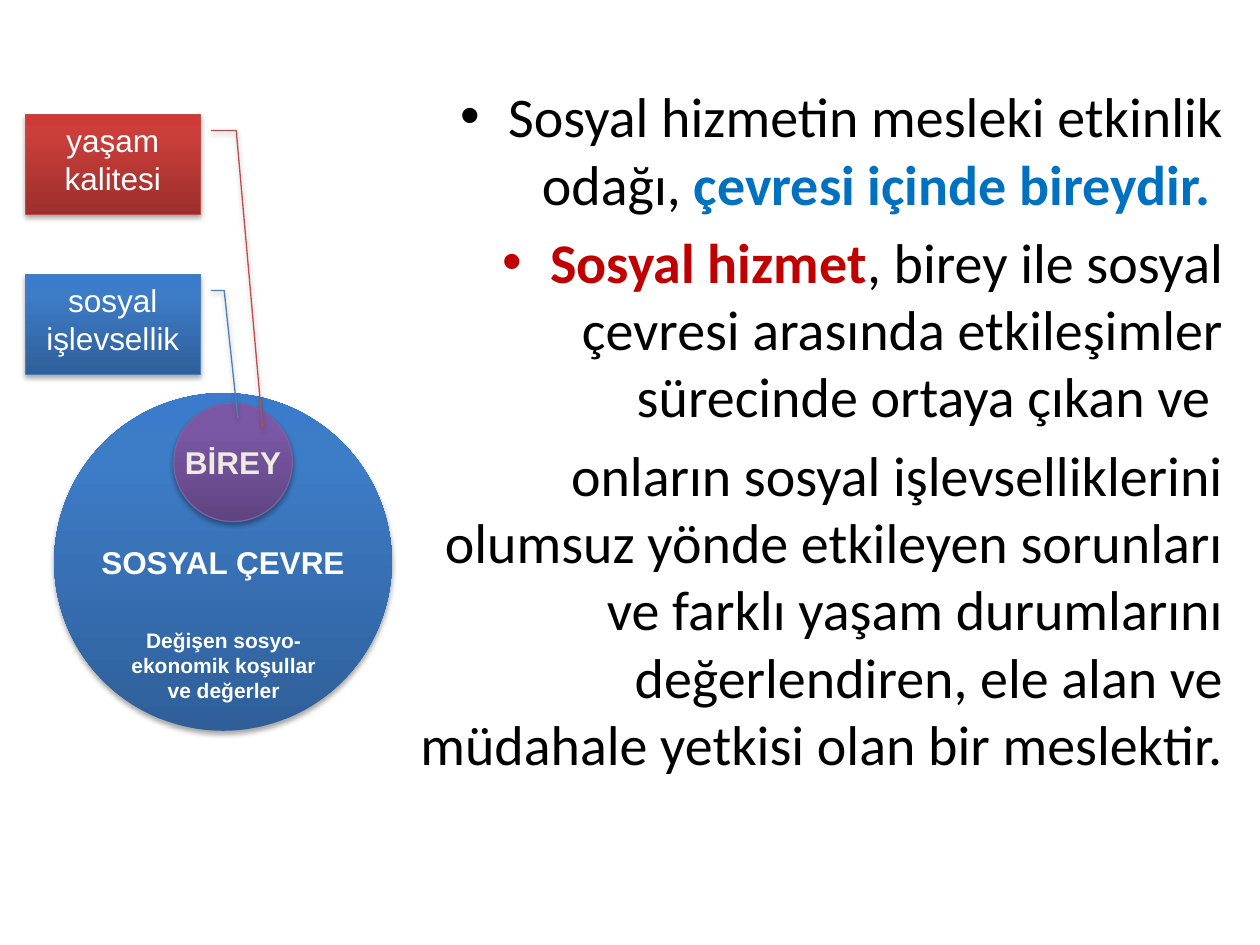
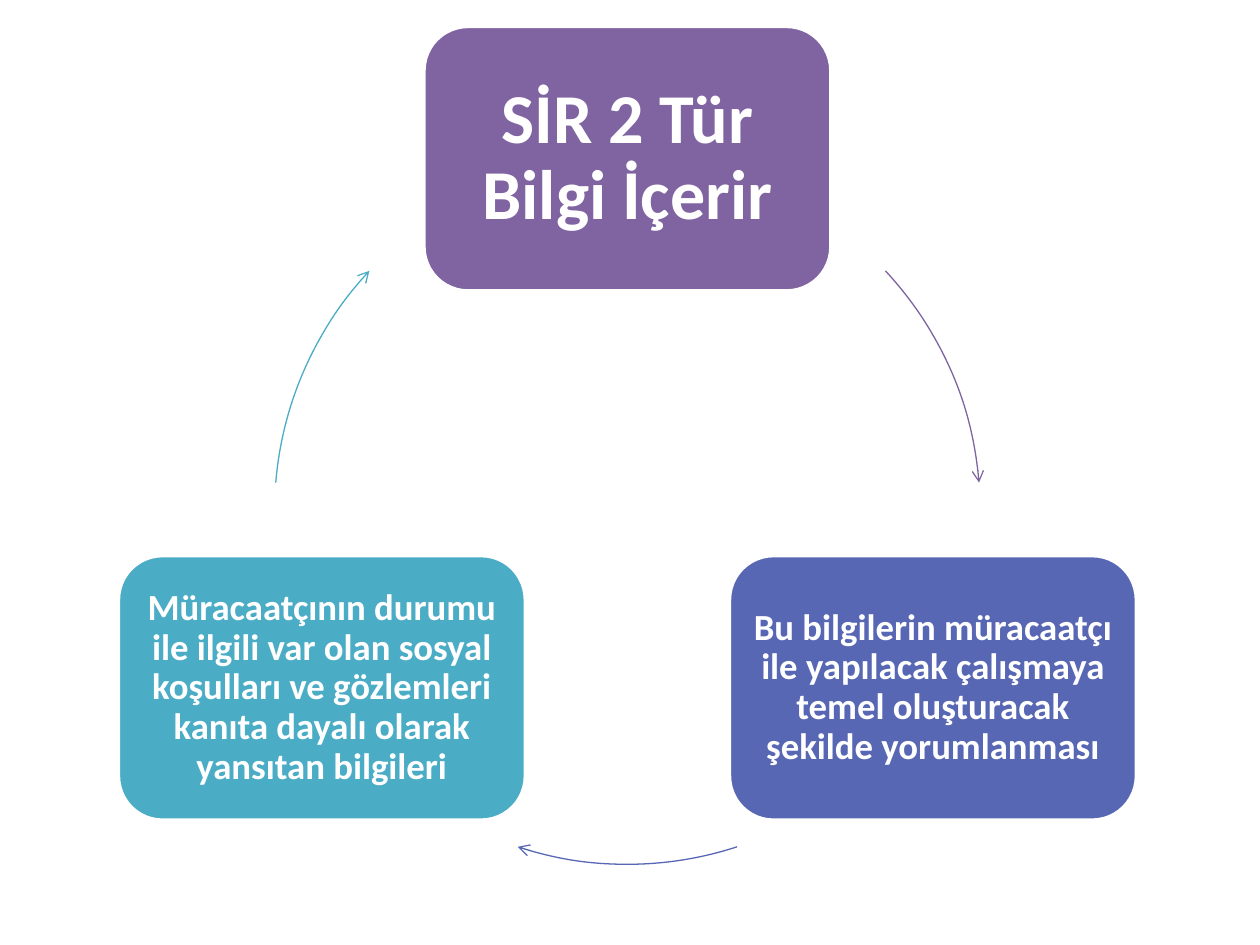
import copy
import math

import pptx
import pptx.dml.color
import pptx.enum.shapes
import pptx.enum.text
import pptx.oxml
import pptx.oxml.ns
import pptx.util

Inches = pptx.util.Inches
Pt = pptx.util.Pt
SHAPE = pptx.enum.shapes.MSO_SHAPE
ALIGN = pptx.enum.text.PP_ALIGN
ANCHOR = pptx.enum.text.MSO_ANCHOR

COLORS = {
    "white": "FFFFFF", "black": "000000", "cream": "EEECE1",
    "blue text": "0070C0", "red text": "C00000",
    "blue line": "4B7EBC", "red line": "BF4C48", "purple line": "7D60A0",
    "purple": "8064A2", "indigo": "5767B4", "teal": "4BACC6",
}
GRADIENTS = {
    "blue": ("2F5F99", "3D7CC7", "3A7CCB"),
    "purple": ("5F4480", "7B58A6", "7C57A8"),
    "red": ("9C2F2D", "CB3E3A", "CE3B37"),
}
STOPS = (0, 0.8, 1)
SHADOW = (
    f'<a:outerShdw {pptx.oxml.ns.nsdecls("a")} blurRad="{Pt(3.1)}" dist="{Pt(1.8)}" '
    'dir="5400000" rotWithShape="0"><a:srgbClr val="000000">'
    '<a:alpha val="35000"/></a:srgbClr></a:outerShdw>'
)
ARROWHEAD = f'<a:tailEnd {pptx.oxml.ns.nsdecls("a")} type="arrow"/>'


def rgb(name):
    return pptx.dml.color.RGBColor.from_string(COLORS[name])


class Deck:
    def __init__(self):
        self.prs = pptx.Presentation()
        self.prs.slide_width, self.prs.slide_height = Inches(10), Inches(7.5)
        self.slide = None

    def new_slide(self, layout):
        self.slide = self.prs.slides.add_slide(self.prs.slide_layouts[layout])
        return self.slide

    def font(self, run, color, **values):
        run.font.color.rgb = rgb(color)
        for name, value in values.items():
            setattr(run.font, name, value)

    def text(self, shape, lines, color="white", anchor=ANCHOR.MIDDLE, inset=None,
             spacing=None, wrap=True, **values):
        frame = shape.text_frame
        frame.word_wrap, frame.vertical_anchor = wrap, anchor
        if inset is not None:
            for side in ("left", "top", "right", "bottom"):
                setattr(frame, f"margin_{side}", Inches(inset))
        frame.text = "\n".join(lines)
        for paragraph in frame.paragraphs:
            paragraph.alignment = ALIGN.CENTER
            paragraph.line_spacing = spacing
            self.font(paragraph.runs[0], color, **values)

    def shape(self, kind, at, line=None, width=0.75, adjust=()):
        shape = self.slide.shapes.add_shape(kind, *map(Inches, at))
        shape.shadow.inherit = False
        for index, value in enumerate(adjust):
            shape.adjustments[index] = value
        if line:
            shape.line.color.rgb = rgb(line)
            shape.line.width = Pt(width)
        else:
            shape.line.fill.background()
        return shape

    def glossy(self, kind, at, gradient, line=None, adjust=()):
        shape = self.shape(kind, at, line, adjust=adjust)
        shape.fill.gradient()
        shape.fill.gradient_angle = 90
        properties = shape._element.spPr
        last = properties.xpath(".//a:gs")[-1]
        last.addnext(copy.deepcopy(last))
        for stop, position, color in zip(shape.fill.gradient_stops, STOPS, GRADIENTS[gradient]):
            stop.position = position
            stop.color.rgb = pptx.dml.color.RGBColor.from_string(color)
        properties.xpath("a:effectLst")[0].append(pptx.oxml.parse_xml(SHADOW))
        return shape

    def card(self, at, color, words, size, inset):
        card = self.shape(SHAPE.ROUNDED_RECTANGLE, at, "white", 2)
        card.fill.solid()
        card.fill.fore_color.rgb = rgb(color)
        self.text(card, [words], inset=inset, spacing=0.9, name="Calibri", size=Pt(size), bold=True)

    def arc_arrow(self, at, color, start, end):
        arc = self.shape(SHAPE.ARC, at, color, adjust=(start * 0.6, end * 0.6))
        arc.fill.background()
        arc._element.spPr.xpath("a:ln")[0].append(pptx.oxml.parse_xml(ARROWHEAD))

    def body(self, at, paragraphs):
        body = self.slide.placeholders[1]
        body.left, body.top, body.width, body.height = map(Inches, at)
        for index, (bulleted, runs) in enumerate(paragraphs):
            frame = body.text_frame
            paragraph = frame.add_paragraph() if index else frame.paragraphs[0]
            paragraph.alignment = ALIGN.RIGHT
            if not bulleted:
                properties = paragraph._p.get_or_add_pPr()
                properties.set("marL", str(Inches(0.38)))
                properties.set("indent", "0")
                properties.append(pptx.oxml.parse_xml(f'<a:buNone {pptx.oxml.ns.nsdecls("a")}/>'))
            for words, color in runs:
                run = paragraph.add_run()
                run.text = words
                self.font(run, color, name="Calibri", size=Pt(32), bold=color != "black")


def person_in_environment(deck):
    slide = deck.new_slide(1)
    title = slide.shapes.title._element
    title.getparent().remove(title)

    label = {"name": "Arial", "size": Pt(18)}
    environment = deck.glossy(SHAPE.OVAL, (0.43, 3.12, 2.68, 2.68), "blue")
    deck.text(environment, ["SOSYAL ÇEVRE"], wrap=False, bold=True, **label)
    person = deck.glossy(SHAPE.OVAL, (1.38, 3.2, 0.94, 0.94), "purple", "purple line")
    deck.text(person, ["BİREY"], "cream", wrap=False, bold=True, **label)

    deck.body((2.8, 0.6, 7.01, 6.35), [
        (True, [("Sosyal hizmetin mesleki etkinlik odağı, ", "black"),
                ("çevresi içinde bireydir. ", "blue text")]),
        (True, [("Sosyal hizmet", "red text"),
                (", birey ile sosyal çevresi arasında etkileşimler sürecinde "
                 "ortaya çıkan ve ", "black")]),
        (False, [("onların sosyal işlevselliklerini olumsuz yönde etkileyen sorunları "
                  "ve farklı yaşam durumlarını değerlendiren, ele alan ve müdahale "
                  "yetkisi olan bir meslektir.", "black")]),
    ])

    for top, color, lines, elbow, tip in (
        (2.18, "blue", ["sosyal", "işlevsellik"], 1.136, (1.441, 1.214)),
        (0.91, "red", ["yaşam kalitesi"], 1.205, (3.137, 1.355)),
    ):
        callout = deck.glossy(SHAPE.LINE_CALLOUT_2, (0.2, top, 1.39, 0.79), color,
                              f"{color} line", (0.159, 1.06, 0.159, elbow, *tip))
        deck.text(callout, lines, anchor=ANCHOR.TOP, **label)

    conditions = slide.shapes.add_textbox(*map(Inches, (0.83, 4.93, 1.89, 0.7)))
    deck.text(conditions, ["Değişen sosyo-ekonomik koşullar ve değerler"],
              anchor=ANCHOR.TOP, name="Arial", size=Pt(12), bold=True)


def information_cycle(deck):
    deck.new_slide(6)
    center_x, center_y, radius = 4.98, 4.06, 2.8
    card_width, card_height = 3.23, 2.1
    ring = (center_x - radius, center_y - radius, 2 * radius, 2 * radius)
    steps = (
        ("purple", "SİR 2 Tür Bilgi İçerir", 40, 0.17, (317, 355.3)),
        ("indigo", "Bu bilgilerin müracaatçı ile yapılacak çalışmaya temel "
         "oluşturacak şekilde yorumlanması", 21, 0.09, (71.9, 108.1)),
        ("teal", "Müracaatçının durumu ile ilgili var olan sosyal koşulları ve "
         "gözlemleri kanıta dayalı olarak yansıtan bilgileri", 21, 0.09, (184.7, 223)),
    )
    for index, (color, words, size, inset, sweep) in enumerate(steps):
        angle = math.radians(120 * index - 90)
        left = center_x + radius * math.cos(angle) - card_width / 2
        top = center_y + radius * math.sin(angle) - card_height / 2
        deck.card((left, top, card_width, card_height), color, words, size, inset)
        deck.arc_arrow(ring, color, *sweep)


def main():
    deck = Deck()
    person_in_environment(deck)
    information_cycle(deck)
    deck.prs.save("out.pptx")


if __name__ == "__main__":
    main()
